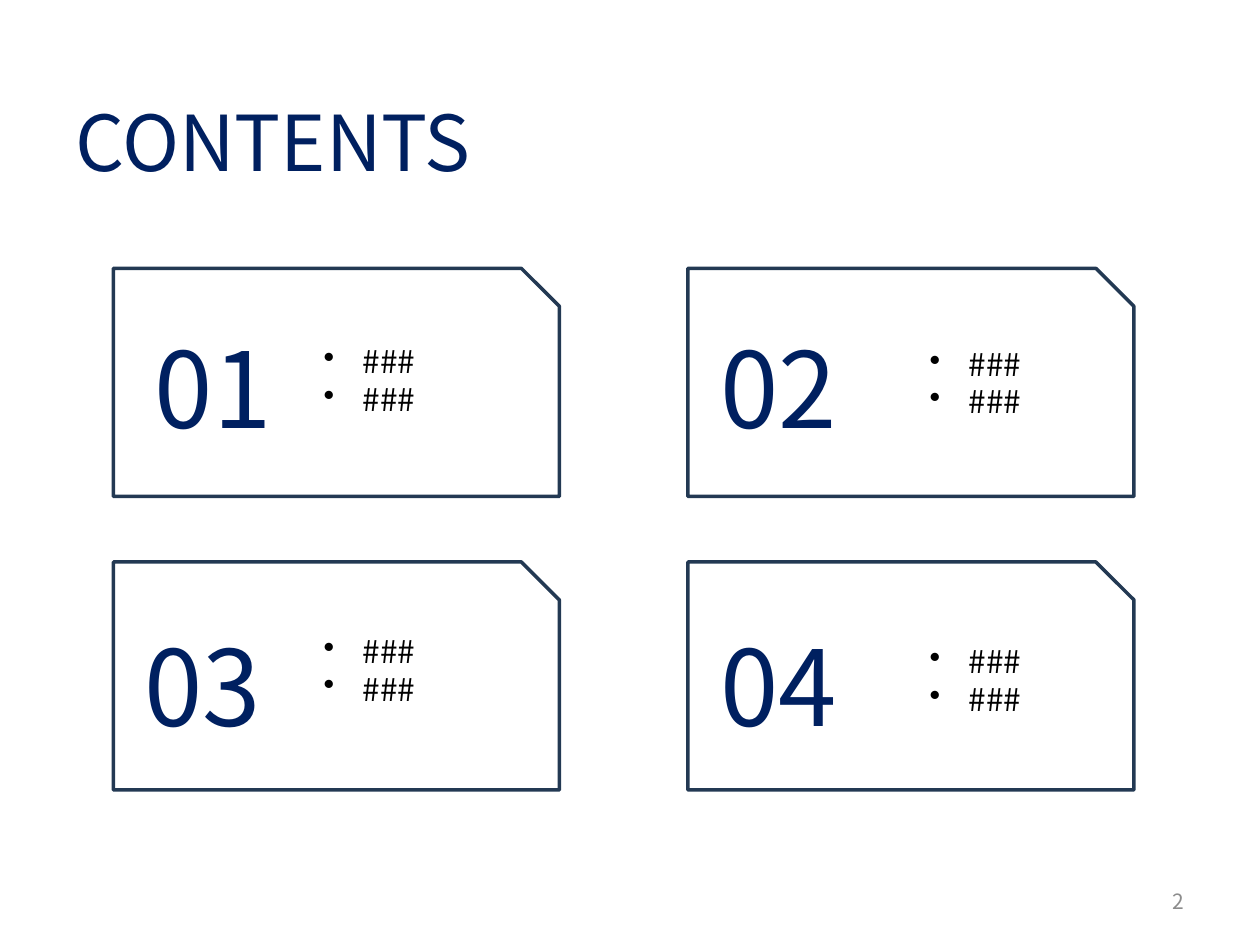
from pptx import Presentation
from pptx.dml.color import RGBColor
from pptx.enum.shapes import MSO_SHAPE
from pptx.enum.text import MSO_ANCHOR, PP_ALIGN
from pptx.oxml import parse_xml
from pptx.oxml.ns import nsdecls
from pptx.util import Inches, Pt

FONT = "Noto Sans CJK KR"
NAVY = "002060"


def color(value):
    return RGBColor.from_string(value)


def add_text(box, lines, size, text_color, anchor=MSO_ANCHOR.TOP,
             align=PP_ALIGN.LEFT, spacing=None, bulleted=False):
    text_box = slide.shapes.add_textbox(*[Inches(length) for length in box])
    frame = text_box.text_frame
    frame.word_wrap = True
    frame.vertical_anchor = anchor
    frame.text = "\n".join(lines)
    for paragraph in frame.paragraphs:
        paragraph.alignment = align
        paragraph.font.name = FONT
        paragraph.font.size = Pt(size)
        paragraph.font.color.rgb = color(text_color)
        if spacing:
            paragraph.line_spacing = Pt(spacing * size)
        if bulleted:
            properties = paragraph._p.get_or_add_pPr()
            indent = Inches(0.31)
            properties.set("marL", str(indent))
            properties.set("indent", str(-indent))
            bullet = parse_xml(f'<a:buChar {nsdecls("a")} char="•"/>')
            properties.insert_element_before(
                bullet, "a:tabLst", "a:defRPr", "a:extLst")


presentation = Presentation()
presentation.slide_width = Inches(10)
presentation.slide_height = Inches(7.5)
slide = presentation.slides.add_slide(presentation.slide_layouts[6])

# Title
add_text((0.5, 0.49, 9, 1.25), ["CONTENTS"], 44, NAVY, MSO_ANCHOR.MIDDLE)

# Two-by-two grid of cards
LEFT, TOP = 0.9, 2.13
COLUMN, ROW = 4.56, 2.33
# Per card: number's left and width, number's top, list's top
cards = [
    ("01", 1.13, 1.26, 2.53, 2.67),
    ("02", 5.62, 1.42, 2.53, 2.69),
    ("03", 1.05, 1.42, 4.89, 4.97),
    ("04", 5.62, 1.42, 4.89, 5.05),
]
list_lefts = (2.47, 7.28)
LINE_SPACING = 1.19

for index, (number, number_left, number_width, number_top, list_top) in enumerate(cards):
    row, column = divmod(index, 2)
    card = slide.shapes.add_shape(
        MSO_SHAPE.SNIP_1_RECTANGLE,
        Inches(LEFT + column * COLUMN), Inches(TOP + row * ROW),
        Inches(3.54), Inches(1.81))
    card.shadow.inherit = False
    card.fill.background()
    card.line.color.rgb = color("233953")
    card.line.width = Pt(2)

    add_text((number_left, number_top, number_width, 1.11), [number],
             60, NAVY, spacing=LINE_SPACING)
    add_text((list_lefts[column], list_top, 1.73, 0.71), ["###", "###"],
             18, "000000", spacing=LINE_SPACING, bulleted=True)

# Slide number
add_text((7.17, 6.95, 2.33, 0.4), ["2"], 12, "8C8C8C",
         MSO_ANCHOR.MIDDLE, PP_ALIGN.RIGHT)

presentation.save("out.pptx")
